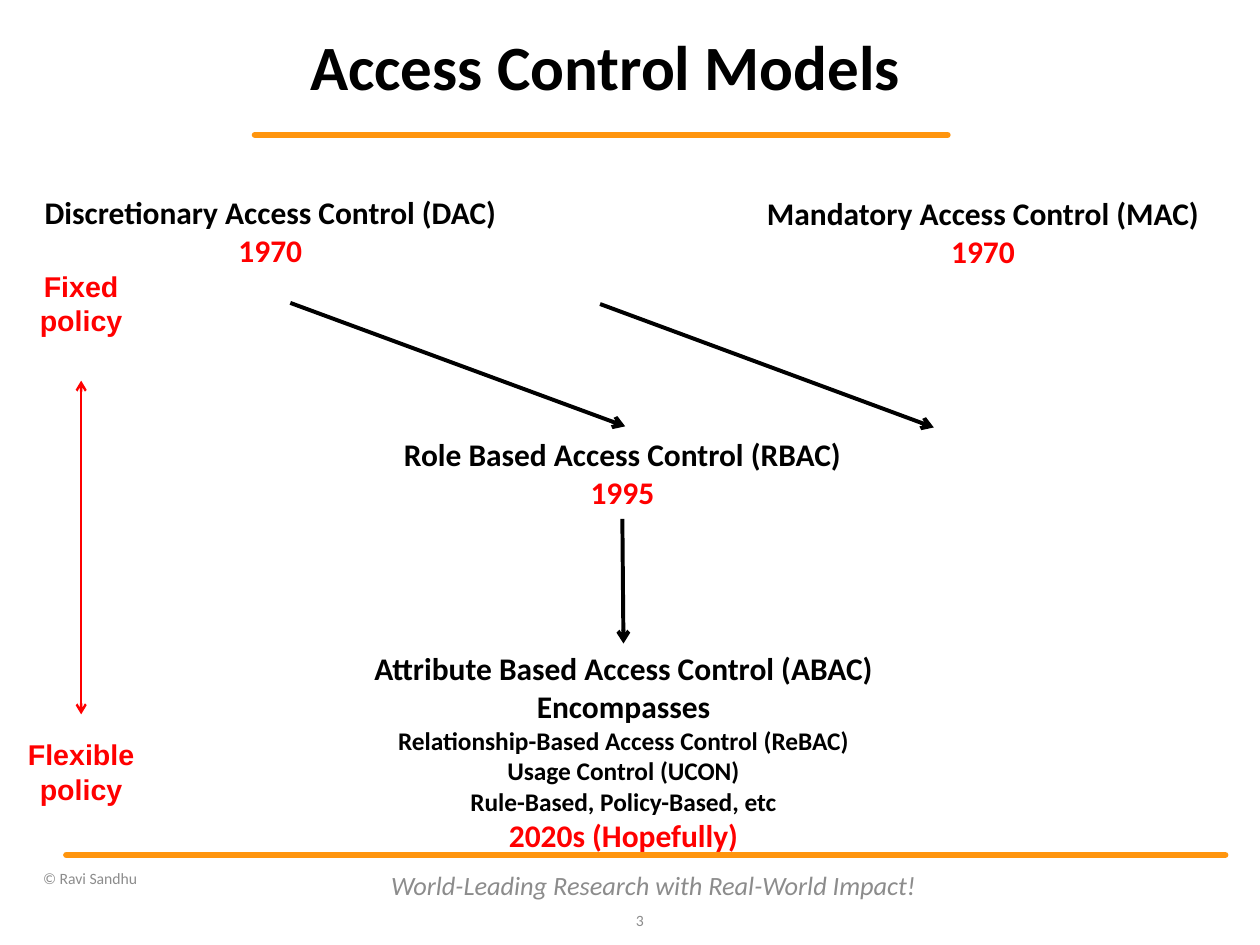
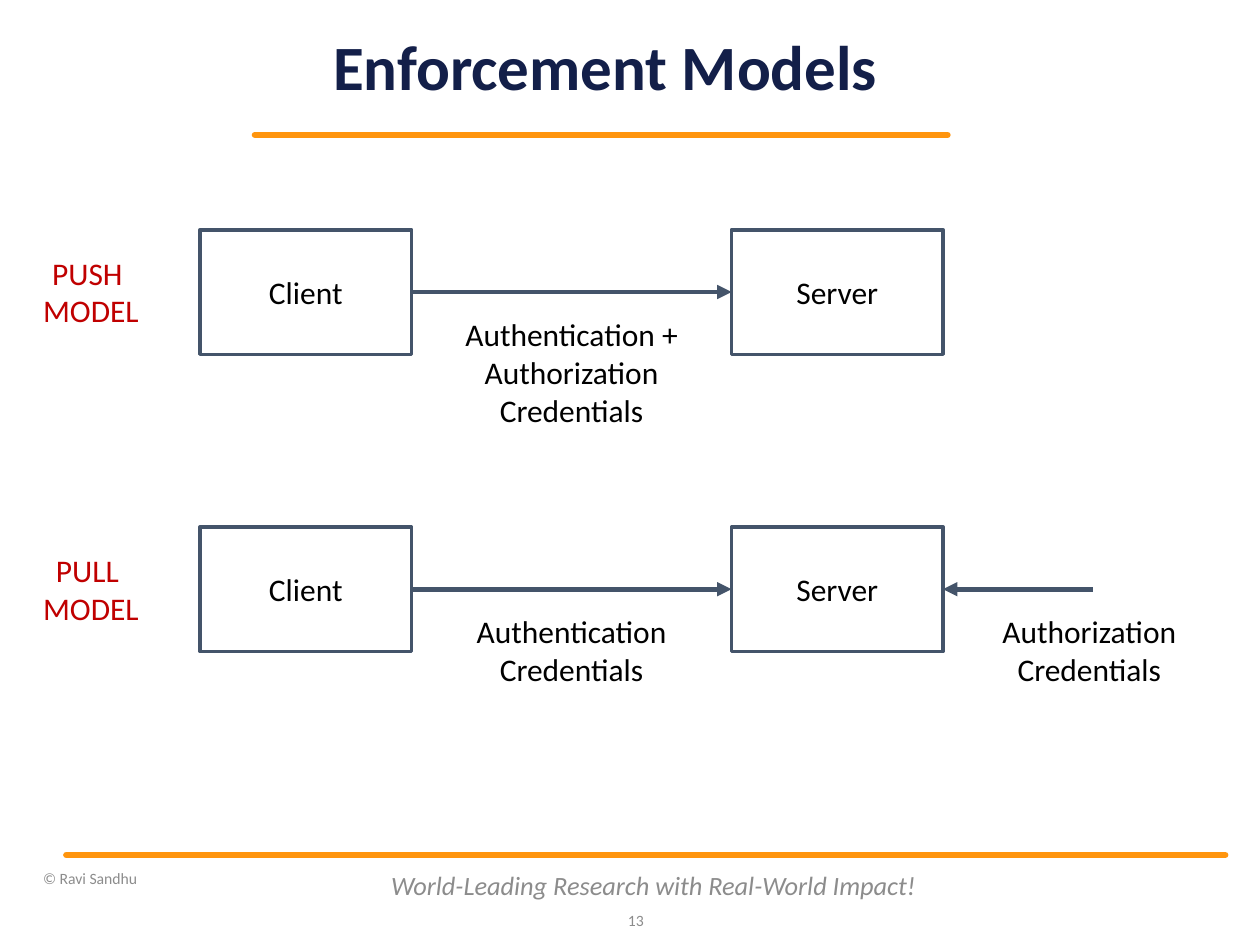
from lxml import etree
from pptx import Presentation
from pptx.dml.color import RGBColor
from pptx.enum.shapes import MSO_CONNECTOR, MSO_SHAPE
from pptx.enum.text import MSO_ANCHOR, PP_ALIGN
from pptx.oxml.ns import qn
from pptx.util import Cm, Inches, Pt

STRAIGHT, RECTANGLE = MSO_CONNECTOR.STRAIGHT, MSO_SHAPE.RECTANGLE
TOP, MIDDLE = MSO_ANCHOR.TOP, MSO_ANCHOR.MIDDLE
LEFT, CENTER, RIGHT = PP_ALIGN.LEFT, PP_ALIGN.CENTER, PP_ALIGN.RIGHT
SIDE_TOP, SIDE_LEFT, SIDE_BOTTOM, SIDE_RIGHT = range(4)

WIDTH_CM, HEIGHT_CM = 28, 21
BLACK, NAVY, SLATE, GRAY = "000000", "131F49", "44546A", "8C8C8C"
ORANGE, RED, DARK_RED = "FF950E", "FF0000", "C00000"
BODY = 19.84

RULES = [((2.23, 1.18), (8.29, 1.18)), ((0.58, 7.48), (10.72, 7.48))]
FOOTER = [
    ("World-Leading Research with Real-World Impact!", (3.31, 7.52, 4.81, 0.44),
     {"size": 16.54, "italic": True}),
    ("© Ravi Sandhu", (0.28, 7.48, 3.03, 0.4), {"size": 9.92, "align": LEFT}),
]
NUMBER_PLACE = (5.29, 7.83, 0.44, 0.44)

# A line is a list of spans or one span; a span is text, or text with its format
MODELS = {
    "DAC": ((0.27, 1.64, 4.19, 0.78),
            ["Discretionary Access Control (DAC)", ("1970", {"color": RED})]),
    "MAC": ((6.56, 1.65, 4.08, 0.78),
            [["Mandatory Access Control (MAC) ", ("1970", {"color": RED})]]),
    "RBAC": ((3.37, 3.76, 4.15, 0.78),
             [["Role Based Access Control (RBAC) ", ("1995", {"color": RED})]]),
    "ABAC": ((2.84, 5.63, 5.23, 1.92),
             ["Attribute Based Access Control (ABAC)", "Encompasses",
              ("Relationship-Based Access Control (ReBAC)", {"size": 16}),
              ("Usage Control (UCON)", {"size": 16}),
              ("Rule-Based, Policy-Based, etc", {"size": 16}),
              ("2020s (Hopefully)", {"color": RED})]),
}
DIAGONALS = [((2.54, 2.65), (5.47, 3.73)), ((5.25, 2.66), (8.17, 3.74))]
POLICY_SCALE = [(["Fixed", "policy"], 2.3), (["Flexible", "policy"], 6.4)]

FLOWS = [
    (["PUSH ", "MODEL"], ["Authentication +", "Authorization", "Credentials"], None),
    (["PULL ", "MODEL"], ["Authentication", "Credentials"],
     ["Authorization", "Credentials"]),
]
BOX_WIDTH, BOX_HEIGHT = 1.85, 1.09
CLIENT_LEFT, SERVER_LEFT = 1.75, 6.4
FIRST_ROW, ROW_PITCH = 2.01, 2.6
SOURCE_X = 9.56


def rgb(value):
    return RGBColor.from_string(value)


def inches(values):
    return [Inches(value) for value in values]


def write(frame, lines, size=BODY, color=BLACK, bold=False, italic=False,
          font="Calibri", align=CENTER, anchor=TOP, spacing=None):
    """Fill a text frame, one paragraph a line; a span may override the format."""
    frame.word_wrap = True
    frame.vertical_anchor = anchor
    for index, line in enumerate(lines):
        para = frame.paragraphs[0] if index == 0 else frame.add_paragraph()
        para.alignment = align
        if spacing:
            para.line_spacing = spacing
        for part in line if isinstance(line, list) else [line]:
            text, own = (part, {}) if isinstance(part, str) else part
            span = para.add_run()
            span.text = text
            span.font.name = font
            span.font.size = Pt(own.get("size", size))
            span.font.color.rgb = rgb(own.get("color", color))
            span.font.bold, span.font.italic = bold, italic


def add_text(page, lines, place, **style):
    box = page.shapes.add_textbox(*inches(place))
    write(box.text_frame, lines, **style)
    return box


def add_box(page, label, left, top):
    box = page.shapes.add_shape(
        RECTANGLE, *inches((left, top, BOX_WIDTH, BOX_HEIGHT)))
    box.shadow.inherit = False
    box.fill.background()
    box.line.color.rgb = rgb(SLATE)
    box.line.width = Pt(2.25)
    write(box.text_frame, [label], anchor=MIDDLE)
    return box


def add_line(page, start, end, color, width, head=None, tail=None, cap="flat"):
    """Draw a line; each end is a point or a (shape, side) pair."""
    points = [(0, 0) if hasattr(stop[0], "shape_id") else stop
              for stop in (start, end)]
    line = page.shapes.add_connector(STRAIGHT, *inches(points[0] + points[1]))
    for stop, connect in ((start, line.begin_connect), (end, line.end_connect)):
        if hasattr(stop[0], "shape_id"):
            connect(*stop)
    line.line.color.rgb = rgb(color)
    line.line.width = Pt(width)
    outline = line.element.spPr.find(qn("a:ln"))
    outline.set("cap", cap)
    for tag, kind in (("a:headEnd", head), ("a:tailEnd", tail)):
        if kind:
            etree.SubElement(outline, qn(tag), type=kind)
    etree.SubElement(line.element.spPr, qn("a:effectLst"))


def add_page(deck, title, number, color):
    """Add a slide with the shared title, rules and footer."""
    page = deck.slides.add_slide(deck.slide_layouts[5])
    heading = page.shapes.title
    heading.left, heading.top, heading.width, heading.height = inches(
        (2.4, 0.33, 5.79, 0.56))
    frame = heading.text_frame
    frame.margin_left = frame.margin_right = 0
    frame.margin_top = frame.margin_bottom = 0
    write(frame, [title], size=39.69, color=color, bold=True, anchor=MIDDLE,
          spacing=0.9)
    for start, end in RULES:
        add_line(page, start, end, ORANGE, 4, cap="rnd")
    for text, place, style in FOOTER:
        add_text(page, [text], place, color=GRAY, anchor=MIDDLE, **style)
    add_text(page, [number], NUMBER_PLACE, size=9.92, color=GRAY, align=RIGHT,
             anchor=MIDDLE)
    return page


def build_access_models(deck):
    page = add_page(deck, "Access Control Models", "3", BLACK)
    boxes = {name: add_text(page, lines, place, bold=True)
             for name, (place, lines) in MODELS.items()}
    steps = DIAGONALS + [((boxes["RBAC"], SIDE_BOTTOM), (boxes["ABAC"], SIDE_TOP))]
    for start, end in steps:
        add_line(page, start, end, BLACK, 2.5, tail="arrow")
    for lines, top in POLICY_SCALE:
        add_text(page, lines, (0.06, top, 1.3, 0.71), size=18, color=RED,
                 bold=True, font="Arial")
    add_line(page, (0.71, 3.33), (0.71, 6.25), RED, 1.5, head="arrow", tail="arrow")


def build_enforcement_models(deck):
    page = add_page(deck, "Enforcement Models", "13", NAVY)
    gap_left = CLIENT_LEFT + BOX_WIDTH
    gap_width = SERVER_LEFT - gap_left
    for row, (name, caption, source) in enumerate(FLOWS):
        top = FIRST_ROW + row * ROW_PITCH
        client = add_box(page, "Client", CLIENT_LEFT, top)
        server = add_box(page, "Server", SERVER_LEFT, top)
        add_line(page, (client, SIDE_RIGHT), (server, SIDE_LEFT), SLATE, 3,
                 tail="triangle")
        add_text(page, name, (0.17, top + 0.16, 1.25, 0.77), color=DARK_RED)
        add_text(page, caption,
                 (gap_left, top + 0.7, gap_width, 0.1 + 0.33 * len(caption)))
        if source:
            add_line(page, (SOURCE_X, top + BOX_HEIGHT / 2), (server, SIDE_RIGHT),
                     SLATE, 3, tail="triangle")
            add_text(page, source, (8.53, top + 0.7, 2, 0.77))


def main():
    deck = Presentation()
    deck.slide_width, deck.slide_height = Cm(WIDTH_CM), Cm(HEIGHT_CM)
    build_access_models(deck)
    build_enforcement_models(deck)
    deck.save("out.pptx")


if __name__ == "__main__":
    main()
